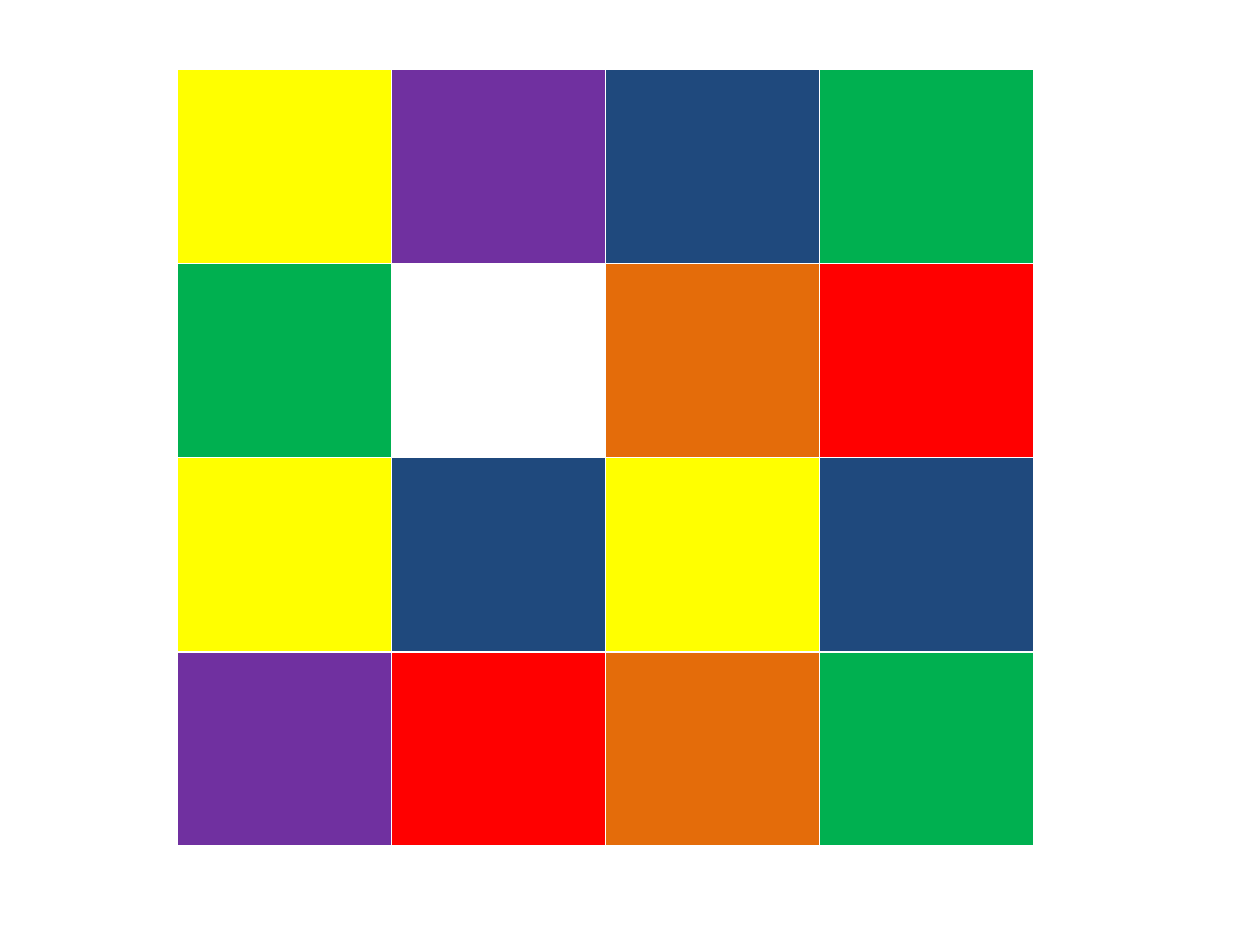
from pptx import Presentation
from pptx.dml.color import RGBColor
from pptx.util import Pt

THEME = {
    "yellow": "FFFF00",
    "purple": "7030A0",
    "blue": "1F497D",
    "green": "00B050",
    "white": "FFFFFF",
    "orange": "E46C0A",
    "red": "FF0000",
}
GRID = [
    ["yellow", "purple", "blue", "green"],
    ["green", "white", "orange", "red"],
    ["yellow", "blue", "yellow", "blue"],
    ["purple", "red", "orange", "green"],
]
LEFT, TOP = 101.5, 39.6
WIDE, HIGH = 122.3, 111

deck = Presentation()
deck.slide_width, deck.slide_height = Pt(720), Pt(540)
slide = deck.slides.add_slide(deck.slide_layouts[6])

rows, cols = len(GRID), len(GRID[0])
frame = slide.shapes.add_table(
    rows, cols, Pt(LEFT), Pt(TOP), Pt(cols * WIDE), Pt(rows * HIGH)
)
table = frame.table
for col in table.columns:
    col.width = Pt(WIDE)
for row, names in zip(table.rows, GRID):
    row.height = Pt(HIGH)
    for cell, name in zip(row.cells, names):
        cell.fill.solid()
        cell.fill.fore_color.rgb = RGBColor.from_string(THEME[name])
        cell.text_frame.paragraphs[0].font.name = "Calibri"

deck.save("out.pptx")
